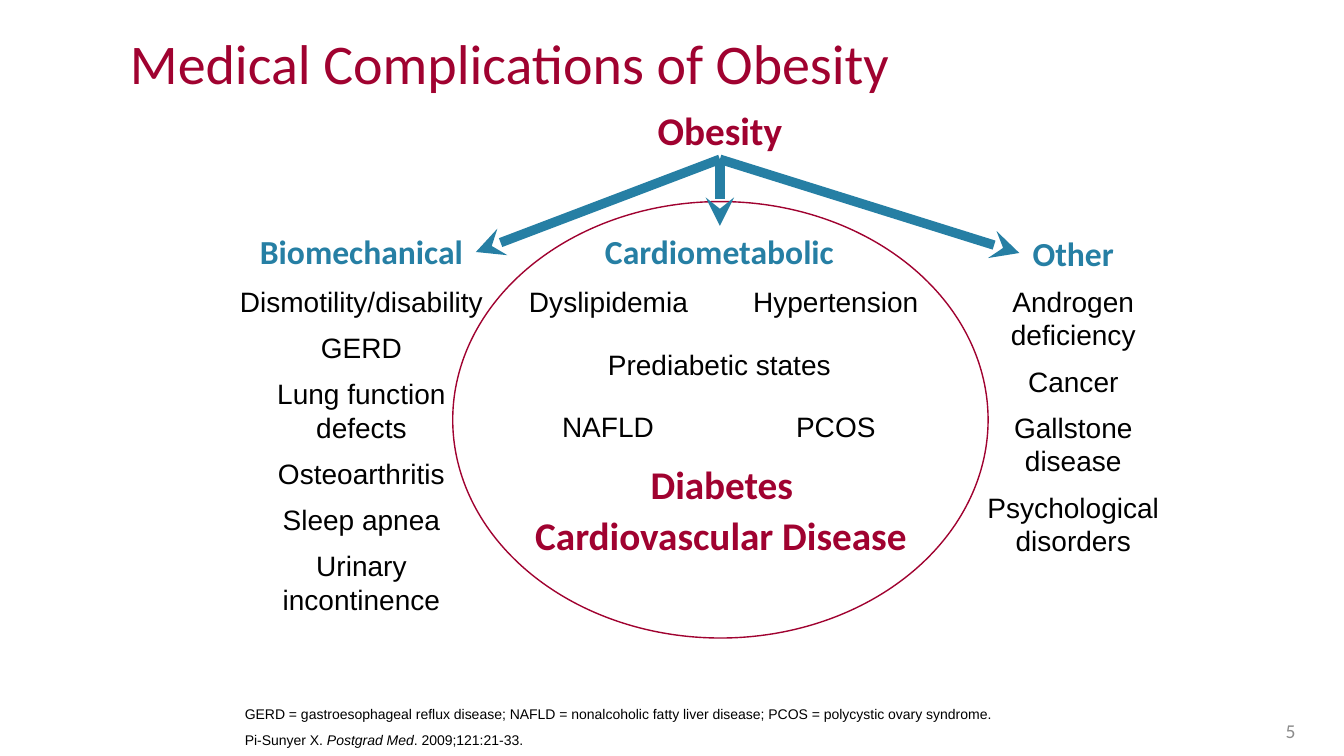
import pptx
import pptx.util
import pptx.dml.color
import pptx.enum.shapes
import pptx.enum.text
import pptx.oxml
import pptx.oxml.ns
from lxml import etree

Inches, Pt = pptx.util.Inches, pptx.util.Pt
PP_ALIGN, ANCHOR = pptx.enum.text.PP_ALIGN, pptx.enum.text.MSO_ANCHOR
CRIMSON, BLUE, BLACK, GREY = "A00230", "267FA4", "000000", "8C8C8C"


def rgb(hex_string):
    return pptx.dml.color.RGBColor.from_string(hex_string)


def add_text(box, lines, size, color, font="Calibri", bold=False,
             align=PP_ALIGN.CENTER, gap=0, wrap=True):
    """Add a text box with one paragraph per line, gap points apart."""
    tf = s.shapes.add_textbox(*map(Inches, box)).text_frame
    tf.word_wrap = wrap
    tf.text = "\n".join(lines)
    for i, p in enumerate(tf.paragraphs):
        p.alignment = align
        p.space_before = Pt(gap if i else 0)
        for r in p.runs:
            r.font.name, r.font.size, r.font.bold = font, Pt(size), bold
            r.font.color.rgb = rgb(color)
    return tf


prs = pptx.Presentation()
prs.slide_width, prs.slide_height = Inches(13.33), Inches(7.5)
s = prs.slides.add_slide(prs.slide_layouts[6])

# Ellipse around the cardiometabolic group
ellipse = s.shapes.add_shape(pptx.enum.shapes.MSO_SHAPE.OVAL,
                             Inches(4.49), Inches(2), Inches(5.31), Inches(4.33))
ellipse.shadow.inherit = False
ellipse.fill.background()
ellipse.line.color.rgb = rgb(CRIMSON)
ellipse.line.width = Pt(1)

# Title and slide number
title = add_text((1.19, 0.31, 11.92, 0.9), ["Medical Complications of Obesity"],
                 40, CRIMSON, align=PP_ALIGN.LEFT)
title.paragraphs[0].line_spacing = 0.9
number = add_text((12.44, 7.08, 0.72, 0.34), ["5"], 14, GREY)
number.vertical_anchor = ANCHOR.MIDDLE

# Cause and main outcomes
for left, top, width, text in [
    (6.02, 1.01, 2.24, "Obesity"),
    (6.24, 4.52, 1.84, "Diabetes"),
    (4.92, 5.02, 4.46, "Cardiovascular Disease"),
]:
    add_text((left, top, width, 0.57), [text], 28, CRIMSON, bold=True)

# Group headings
for left, top, width, text in [
    (2.45, 2.24, 2.27, "Biomechanical"),
    (5.24, 2.24, 3.79, "Cardiometabolic"),
    (10.11, 2.26, 1.07, "Other"),
]:
    add_text((left, top, width, 0.5), [text], 24, BLUE, bold=True)

# Cardiometabolic conditions
for left, top, width, text in [
    (5.14, 2.77, 1.79, "Dyslipidemia"),
    (7.36, 2.77, 1.86, "Hypertension"),
    (5.92, 3.4, 2.43, "Prediabetic states"),
    (5.47, 4.01, 1.12, "NAFLD"),
    (7.79, 4.01, 1, "PCOS"),
]:
    add_text((left, top, width, 0.44), [text], 20, BLACK, "Arial", wrap=False)

# Side columns
biomechanical = ["Dismotility/disability", "GERD", "Lung function\vdefects",
                 "Osteoarthritis", "Sleep apnea", "Urinary\vincontinence"]
other = ["Androgen deficiency", "Cancer", "Gallstone disease",
         "Psychological\vdisorders"]
for box, conditions in [((2.17, 2.77, 2.83, 3.42), biomechanical),
                        ((9.59, 2.77, 2.11, 2.84), other)]:
    add_text(box, conditions, 20, BLACK, "Arial", gap=9)

# Arrows from obesity to the three groups
for x, y in [(10.11, 2.51), (4.72, 2.5), (7.14, 2.24)]:
    arrow = s.shapes.add_connector(pptx.enum.shapes.MSO_CONNECTOR.STRAIGHT,
                                   Inches(7.14), Inches(1.58), Inches(x), Inches(y))
    arrow.line.color.rgb = rgb(BLUE)
    arrow.line.width = Pt(6.75)
    qn = pptx.oxml.ns.qn
    etree.SubElement(arrow.line._get_or_add_ln(), qn("a:tailEnd"), type="stealth")
    etree.SubElement(arrow._element.spPr, qn("a:effectLst"))

# Abbreviations and citation
notes = add_text(
    (2.33, 6.95, 8.5, 0.52),
    ["GERD = gastroesophageal reflux disease; NAFLD = nonalcoholic fatty liver disease; "
     "PCOS = polycystic ovary syndrome.", "Pi-Sunyer X. "],
    10, BLACK, "Arial", align=PP_ALIGN.LEFT, gap=6)
notes.vertical_anchor = ANCHOR.BOTTOM
for text, italic in [("Postgrad Med", True), (". 2009;121:21-33.", False)]:
    r = notes.paragraphs[1].add_run()
    r.text = text
    r.font.name, r.font.size, r.font.italic = "Arial", Pt(10), italic
    r.font.color.rgb = rgb(BLACK)

prs.save("out.pptx")
